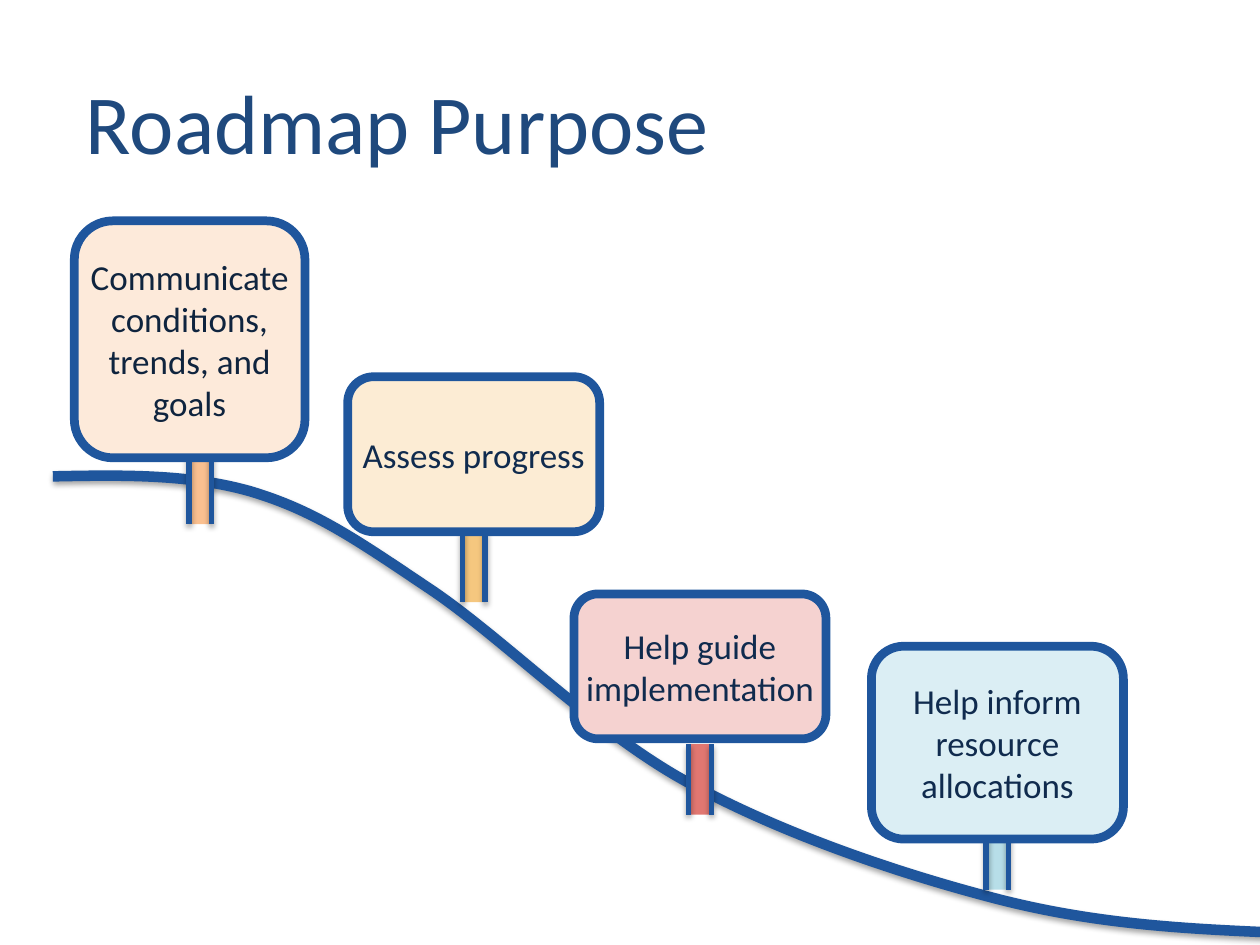
import pptx
import pptx.dml.color
import pptx.enum.shapes
import pptx.enum.text
import pptx.oxml
import pptx.oxml.ns
import pptx.util

Pt = pptx.util.Pt
Shape = pptx.enum.shapes.MSO_SHAPE
Align = pptx.enum.text.PP_ALIGN
Anchor = pptx.enum.text.MSO_ANCHOR
qn = pptx.oxml.ns.qn

ROAD_BLUE = "1F569D"
POST_WIDTH, POST_HEIGHT, POST_OFFSET = 13, 40.3, 65.5


def color(hex_value):
    return pptx.dml.color.RGBColor.from_string(hex_value)


def style_road_line(shape, width):
    """Blue outline with a soft shadow straight below."""
    shape.line.color.rgb = color(ROAD_BLUE)
    shape.line.width = Pt(width)
    shape._element.spPr.append(pptx.oxml.parse_xml(
        f'<a:effectLst {pptx.oxml.ns.nsdecls("a")}>'
        f'<a:outerShdw blurRad="{Pt(3.1)}" dist="{Pt(1.8)}" dir="5400000" rotWithShape="0">'
        '<a:srgbClr val="000000"><a:alpha val="35000"/></a:srgbClr>'
        '</a:outerShdw></a:effectLst>'))


deck = pptx.Presentation()
deck.slide_width, deck.slide_height = Pt(720), Pt(540)
page = deck.slides.add_slide(deck.slide_layouts[6])

# Winding road: cubic curves, each starting where the last one ended
road_left, road_top = 30.2, 272.2
road_curves = [
    ((69.1, 271.4), (108, 270.7), (143.3, 280.8)),
    ((179.3, 291.6), (202.3, 307.4), (244.1, 335.5)),
    ((285.8, 362.9), (339.1, 417.6), (393.1, 447.1)),
    ((447.1, 476.6), (513.4, 499), (568.8, 513.4)),
    ((624.2, 527.8), (674.6, 530.6), (725.8, 532.8)),
]
builder = page.shapes.build_freeform(Pt(road_left), Pt(road_top))
builder.add_line_segments([(Pt(x), Pt(y)) for *_, (x, y) in road_curves], close=False)
road = builder.convert_to_shape()

# Bend each straight segment into its curve
segments = list(road._element.iter(qn("a:lnTo")))
for segment, curve in zip(segments, road_curves):
    points = "".join(f'<a:pt x="{Pt(x - road_left)}" y="{Pt(y - road_top)}"/>'
                     for x, y in curve)
    segment.getparent().replace(segment, pptx.oxml.parse_xml(
        f'<a:cubicBezTo {pptx.oxml.ns.nsdecls("a")}>{points}</a:cubicBezTo>'))
road.fill.background()
style_road_line(road, 6)

# Signs: text, board (left, top, width, height), post top, board, post and text colours
signs = [
    ("Communicate conditions, trends, and goals",
     (42.5, 126.2, 131.8, 135.4), 259.2, "FDEADA", "FAC090", "0F243E"),
    ("Assess progress",
     (198.7, 215.3, 144, 88.6), 303.8, "FCECD4", "F5C77F", "102B4E"),
    ("Help guide implementation",
     (328, 339.4, 144, 82.8), 425.2, "F5D2D0", "E17771", "102B4E"),
    ("Help inform resource allocations",
     (498, 369.3, 144, 110.2), 468.1, "DBEEF4", "B7DEE8", "102B4E"),
]
for text, board_box, post_top, board_fill, post_fill, text_color in signs:
    sign = page.shapes.add_group_shape()

    # Post with a line along each side
    post_left = board_box[0] + POST_OFFSET
    post = sign.shapes.add_shape(Shape.RECTANGLE, Pt(post_left), Pt(post_top),
                                 Pt(POST_WIDTH), Pt(POST_HEIGHT))
    post.shadow.inherit = False
    post.fill.solid()
    post.fill.fore_color.rgb = color(post_fill)
    post.line.fill.background()
    for x in (post_left, post_left + POST_WIDTH):
        side = sign.shapes.add_connector(
            pptx.enum.shapes.MSO_CONNECTOR.STRAIGHT,
            Pt(x), Pt(post_top), Pt(x), Pt(post_top + POST_HEIGHT))
        style_road_line(side, 3)

    # Board with its message
    board = sign.shapes.add_shape(Shape.ROUNDED_RECTANGLE, *map(Pt, board_box))
    board.shadow.inherit = False
    board.fill.solid()
    board.fill.fore_color.rgb = color(board_fill)
    board.line.color.rgb = color(ROAD_BLUE)
    board.line.width = Pt(5)
    frame = board.text_frame
    frame.word_wrap = True
    frame.vertical_anchor = Anchor.MIDDLE
    frame.margin_left = frame.margin_right = Pt(0.7)
    para = frame.paragraphs[0]
    para.alignment = Align.CENTER
    span = para.add_run()
    span.text = text
    span.font.name = "Calibri"
    span.font.size = Pt(20)
    span.font.color.rgb = color(text_color)

# Title
title = page.shapes.add_textbox(Pt(42), Pt(23.8), Pt(558), Pt(90))
frame = title.text_frame
frame.word_wrap = True
frame.vertical_anchor = Anchor.MIDDLE
span = frame.paragraphs[0].add_run()
span.text = "Roadmap Purpose"
span.font.name = "Calibri"
span.font.size = Pt(48)
span.font.color.rgb = color("1F497D")

deck.save("out.pptx")
